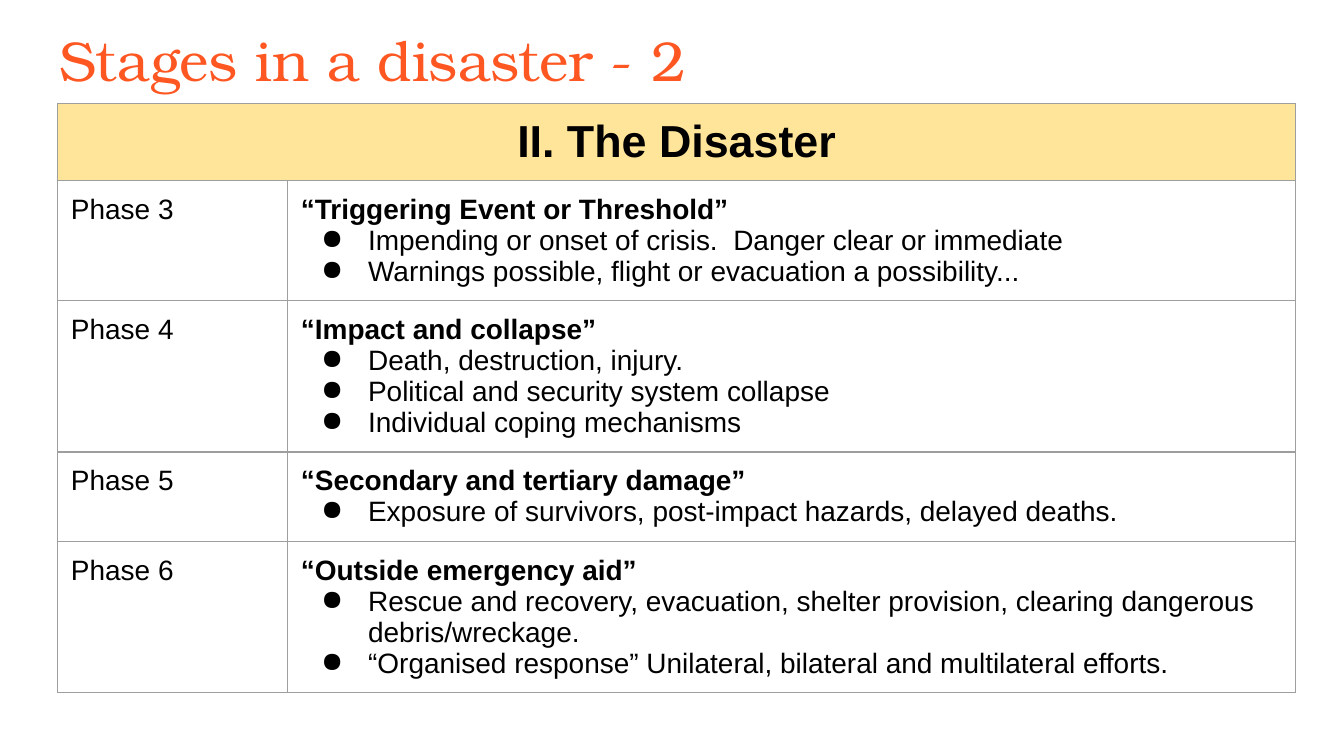
from lxml import etree
from pptx import Presentation
from pptx.dml.color import RGBColor
from pptx.enum import text
from pptx.oxml import ns
from pptx.util import Pt

ORANGE = RGBColor(0xFF, 0x57, 0x22)
CREAM = RGBColor(0xFF, 0xE5, 0x99)
BLACK = RGBColor(0, 0, 0)
GREY = RGBColor(0x9E, 0x9E, 0x9E)

PHASES = [
    ("Phase 3", 64.4, "“Triggering Event or Threshold”",
     ["Impending or onset of crisis.  Danger clear or immediate",
      "Warnings possible, flight or evacuation a possibility..."]),
    ("Phase 4", 81, "“Impact and collapse”",
     ["Death, destruction, injury.",
      "Political and security system collapse",
      "Individual coping mechanisms"]),
    ("Phase 5", 47.8, "“Secondary and tertiary damage”",
     ["Exposure of survivors, post-impact hazards, delayed deaths."]),
    ("Phase 6", 81, "“Outside emergency aid”",
     ["Rescue and recovery, evacuation, shelter provision, clearing dangerous debris/wreckage.",
      "“Organised response” Unilateral, bilateral and multilateral efforts."]),
]


def style_paragraph(paragraph, size, bold=False, color=BLACK, font="Arial"):
    for run in paragraph.runs:
        run.font.name = font
        run.font.size = Pt(size)
        run.font.bold = bold
        run.font.color.rgb = color


def add_bullet(paragraph):
    properties = paragraph._p.get_or_add_pPr()
    properties.set("marL", str(Pt(36)))
    properties.set("indent", str(-Pt(25.2)))
    etree.SubElement(properties, ns.qn("a:buChar"), char="●")


deck = Presentation()
deck.slide_width, deck.slide_height = Pt(720), Pt(405)
slide = deck.slides.add_slide(deck.slide_layouts[5])

heading = slide.shapes.title
heading.left, heading.top, heading.width, heading.height = Pt(24.5), Pt(6.5), Pt(671), Pt(45.4)
heading_frame = heading.text_frame
heading_frame.text = "Stages in a disaster - 2"
heading_frame.auto_size = text.MSO_AUTO_SIZE.NONE
heading_frame.vertical_anchor = text.MSO_ANCHOR.TOP
heading_frame.margin_left = heading_frame.margin_right = Pt(7.2)
heading_frame.margin_top = heading_frame.margin_bottom = Pt(7.2)
heading_frame.paragraphs[0].alignment = text.PP_ALIGN.LEFT
style_paragraph(heading_frame.paragraphs[0], 30, color=ORANGE, font="TeX Gyre Bonum")

heights = [41.3] + [height for _, height, _, _ in PHASES]
stages = slide.shapes.add_table(
    len(heights), 2, Pt(30.8), Pt(55.4), Pt(663.4), Pt(sum(heights))).table
stages.columns[0].width, stages.columns[1].width = Pt(123.2), Pt(540.2)
for row, height in zip(stages.rows, heights):
    row.height = Pt(height)

banner = stages.cell(0, 0)
banner.merge(stages.cell(0, 1))
banner.text = "II. The Disaster"
banner.text_frame.paragraphs[0].alignment = text.PP_ALIGN.CENTER
style_paragraph(banner.text_frame.paragraphs[0], 24, bold=True)

for index, (phase, _, stage, events) in enumerate(PHASES, start=1):
    label, details = stages.cell(index, 0), stages.cell(index, 1)
    label.text = phase
    style_paragraph(label.text_frame.paragraphs[0], 15)
    details.text = stage
    style_paragraph(details.text_frame.paragraphs[0], 15, bold=True)
    for event in events:
        line = details.text_frame.add_paragraph()
        line.text = event
        style_paragraph(line, 15)
        add_bullet(line)

for cell in stages.iter_cells():
    cell.margin_left = cell.margin_right = Pt(7.2)
    cell.margin_top = cell.margin_bottom = Pt(7.2)
    cell.vertical_anchor = text.MSO_ANCHOR.TOP
    borders = cell._tc.get_or_add_tcPr()
    for side in ("a:lnL", "a:lnR", "a:lnT", "a:lnB"):
        border = etree.SubElement(borders, ns.qn(side), w=str(Pt(0.75)))
        ink = etree.SubElement(border, ns.qn("a:solidFill"))
        etree.SubElement(ink, ns.qn("a:srgbClr"), val=str(GREY))
    cell.fill.background()

for cell in stages.rows[0].cells:
    cell.fill.solid()
    cell.fill.fore_color.rgb = CREAM

deck.save("out.pptx")
